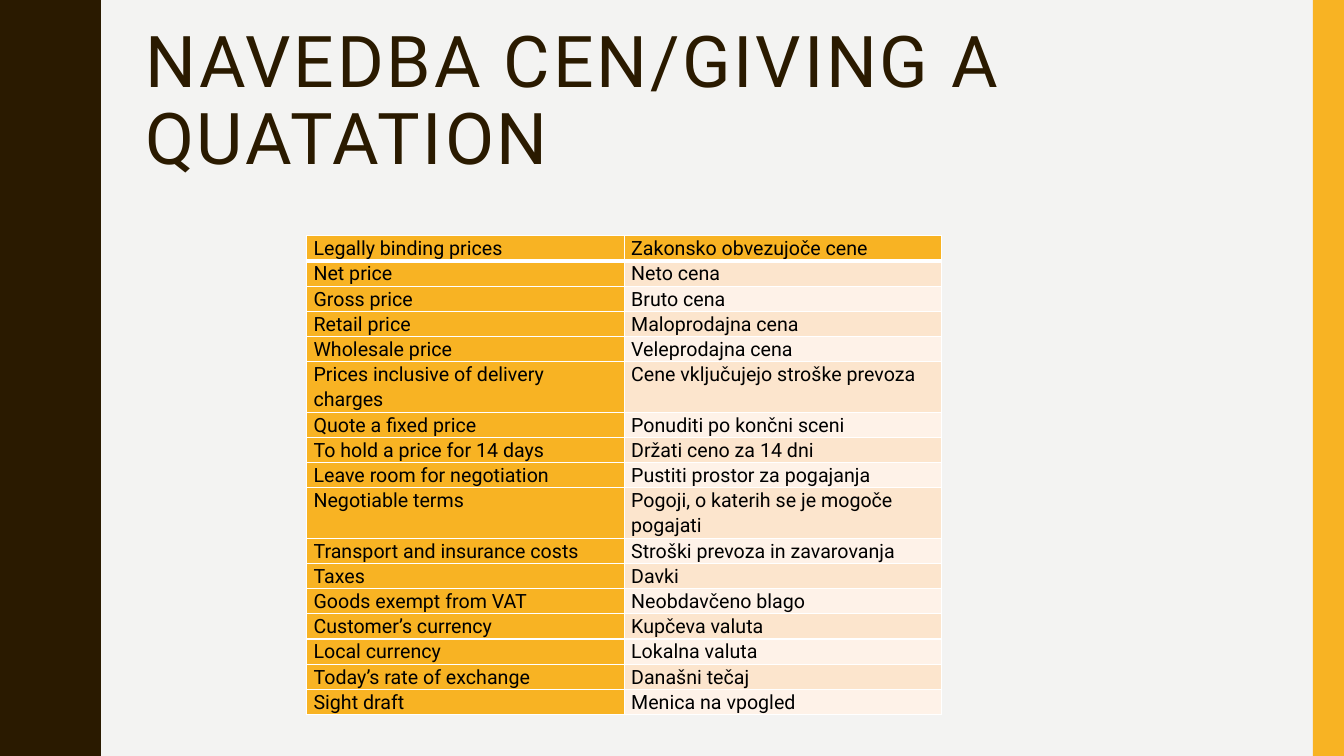
"""Build a slide with a bilingual table of pricing vocabulary."""
from lxml.etree import SubElement
from pptx import Presentation
from pptx.dml.color import RGBColor
from pptx.enum.shapes import MSO_SHAPE
from pptx.enum.text import MSO_ANCHOR
from pptx.oxml.ns import qn
from pptx.util import Inches, Pt

BROWN = RGBColor(0x2A, 0x1A, 0x00)
AMBER = RGBColor(0xF8, 0xB3, 0x23)
PAPER = RGBColor(0xF3, 0xF3, 0xF2)
PEACH = RGBColor(0xFC, 0xE5, 0xCD)
CREAM = RGBColor(0xFE, 0xF2, 0xE8)
BLACK = RGBColor(0x00, 0x00, 0x00)
WHITE = RGBColor(0xFF, 0xFF, 0xFF)
FONT = "Roboto"

HALF_WAVE = [
    (0.78, 0.07), (0.79, 0.14), (0.8, 0.2), (0.81, 0.25), (0.83, 0.29),
    (0.85, 0.33), (0.87, 0.38), (0.89, 0.42), (0.91, 0.46), (0.93, 0.5),
    (0.95, 0.55), (0.96, 0.61), (0.97, 0.68), (0.97, 0.75),
]
TERMS = [
    ("Legally binding prices", "Zakonsko obvezujoče cene"),
    ("Net price", "Neto cena"),
    ("Gross price", "Bruto cena"),
    ("Retail price", "Maloprodajna cena"),
    ("Wholesale price", "Veleprodajna cena"),
    ("Prices inclusive of delivery charges", "Cene vključujejo stroške prevoza"),
    ("Quote a fixed price", "Ponuditi po končni sceni"),
    ("To hold a price for 14 days", "Držati ceno za 14 dni"),
    ("Leave room for negotiation", "Pustiti prostor za pogajanja"),
    ("Negotiable terms", "Pogoji, o katerih se je mogoče pogajati"),
    ("Transport and insurance costs", "Stroški prevoza in zavarovanja"),
    ("Taxes", "Davki"),
    ("Goods exempt from VAT", "Neobdavčeno blago"),
    ("Customer’s currency", "Kupčeva valuta"),
    ("Local currency", "Lokalna valuta"),
    ("Today’s rate of exchange", "Današni tečaj"),
    ("Sight draft", "Menica na vpogled"),
]


def add_run(p, text, size, color):
    r = p.add_run()
    r.text = text
    r.font.name = FONT
    r.font.size = Pt(size)
    r.font.color.rgb = color
    return r


def add_border(cell, side, width):
    ln = SubElement(cell._tc.get_or_add_tcPr(), qn(f"a:ln{side}"), w=str(Pt(width)))
    SubElement(SubElement(ln, qn("a:solidFill")), qn("a:srgbClr"), val=str(WHITE))


prs = Presentation()
prs.slide_width = Inches(13.33)
prs.slide_height = Inches(7.5)
s = prs.slides.add_slide(prs.slide_layouts[6])
s.background.fill.solid()
s.background.fill.fore_color.rgb = PAPER

outline = [(0.78, 0)]
for half in range(10):
    for x, y in HALF_WAVE:
        outline.append((1.75 - x if half % 2 else x, half * 0.75 + y))
outline.append((0, 7.5))
builder = s.shapes.build_freeform(0, 0, scale=Inches(1))
builder.add_line_segments(outline, close=True)
wave = builder.convert_to_shape()
stripe = s.shapes.add_shape(
    MSO_SHAPE.RECTANGLE, Inches(13.02), 0, Inches(0.31), Inches(7.5))
for sp, color in ((wave, BROWN), (stripe, AMBER)):
    sp.shadow.inherit = False
    sp.fill.solid()
    sp.fill.fore_color.rgb = color
    sp.line.fill.background()

title = s.shapes.add_textbox(Inches(1.34), Inches(0.21), Inches(11.13), Inches(1.63))
tf = title.text_frame
tf.word_wrap = True
tf.vertical_anchor = MSO_ANCHOR.MIDDLE
p = tf.paragraphs[0]
p.line_spacing = 0.9
r = add_run(p, "NAVEDBA CEN/GIVING A QUATATION", 51, BROWN)
r.font._element.set("spc", "200")

table = s.shapes.add_table(
    len(TERMS), 2, Inches(3.04), Inches(2.34), Inches(6.3), Inches(4.08)).table
table.first_row = False
table.horz_banding = False
for column in table.columns:
    column.width = Inches(3.15)
for row, terms in enumerate(TERMS):
    table.rows[row].height = Inches(0.24)
    band = PEACH if row % 2 else CREAM
    for col, term in enumerate(terms):
        cell = table.cell(row, col)
        cell.margin_left = cell.margin_right = Inches(0.07)
        cell.margin_top = cell.margin_bottom = 0
        for side in "LRTB":
            under_header = (row, side) in ((0, "B"), (1, "T"))
            add_border(cell, side, 3 if under_header else 1)
        cell.fill.solid()
        cell.fill.fore_color.rgb = AMBER if row == 0 or col == 0 else band
        p = cell.text_frame.paragraphs[0]
        p.line_spacing = 1.07
        add_run(p, term, 14, BLACK)

prs.save("out.pptx")
